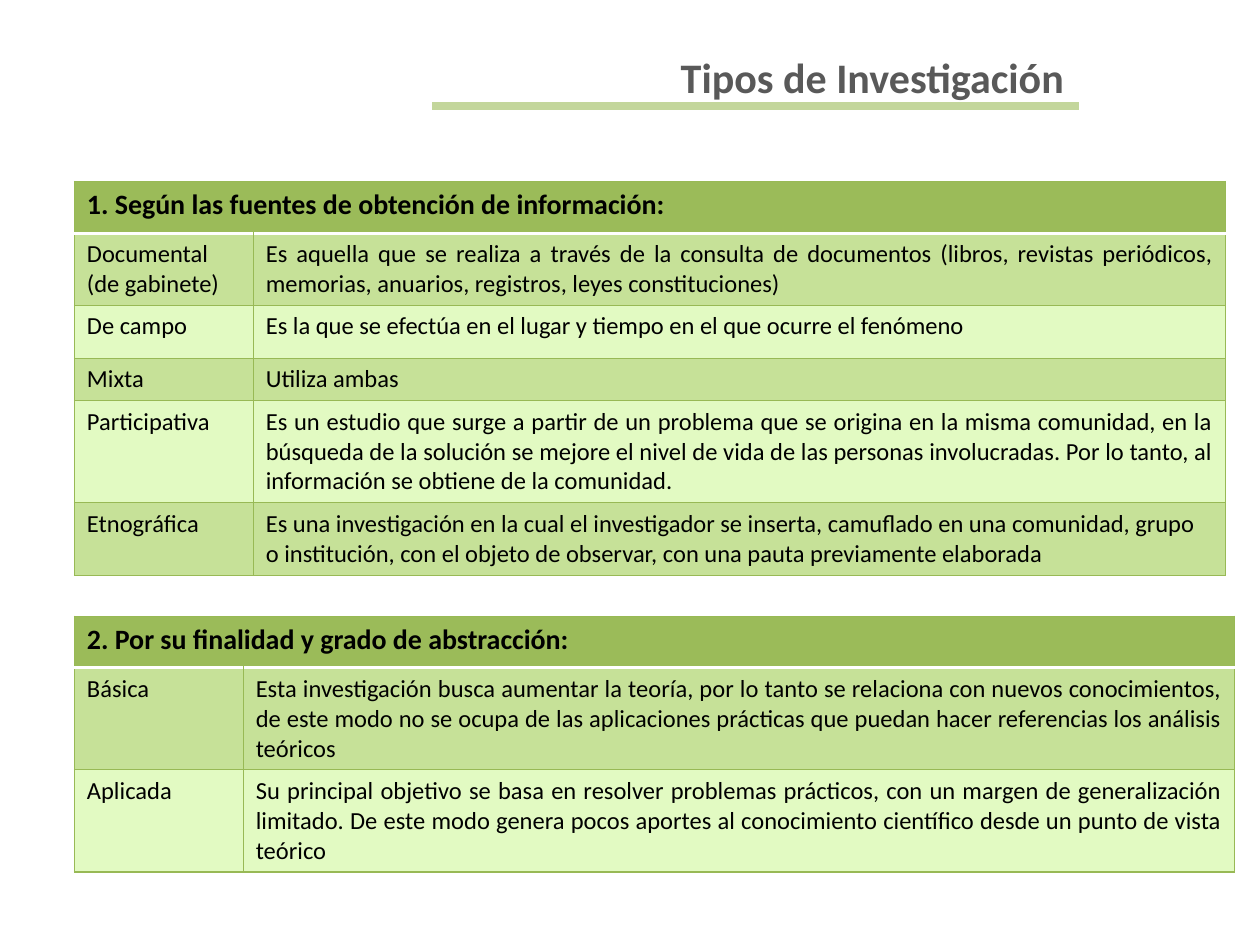
from lxml.etree import SubElement
from pptx import Presentation
from pptx.dml.color import RGBColor
from pptx.enum.shapes import MSO_CONNECTOR
from pptx.enum.text import MSO_ANCHOR, MSO_AUTO_SIZE, PP_ALIGN
from pptx.oxml import parse_xml
from pptx.oxml.ns import nsdecls, qn
from pptx.util import Inches, Pt

COLORS = {
    "title": "595959", "rule": "C3D69B", "header": "9BBB59", "border": "98B955",
    "dark_row": "C6E198", "light_row": "E2FAC2", "text": "000000", "white": "FFFFFF",
}
TITLE = "Tipos de Investigación "
TABLES = [
    {
        "heading": "1. Según las fuentes de obtención de información:",
        "top": 1.44,
        "columns": [1.42, 7.72],
        "heights": [0.41, 0.57, 0.42, 0.33, 0.8, 0.57],
        "left_aligned": ["Etnográfica"],
        "rows": [
            ("Documental (de gabinete)", "Es aquella que se realiza a través de la consulta de documentos (libros, revistas periódicos, memorias, anuarios, registros, leyes constituciones)"),
            ("De campo", "Es la que se efectúa en el lugar y tiempo en el que ocurre el fenómeno"),
            ("Mixta", "Utiliza ambas "),
            ("Participativa", "Es un estudio que surge a partir de un problema que se origina en la misma comunidad, en la búsqueda de la solución se mejore el nivel de vida de las personas involucradas. Por lo tanto, al información se obtiene de la comunidad."),
            ("Etnográfica", "Es una investigación en la cual el investigador se inserta, camuflado en una comunidad, grupo o institución, con el objeto de observar, con una pauta previamente elaborada"),
        ],
    },
    {
        "heading": "2. Por su finalidad y grado de abstracción:",
        "top": 4.89,
        "columns": [1.34, 7.87],
        "heights": [0.41, 0.8, 0.8],
        "left_aligned": [],
        "rows": [
            ("Básica", "Esta investigación busca aumentar la teoría, por lo tanto se relaciona con nuevos conocimientos, de este modo no se ocupa de las aplicaciones prácticas que puedan hacer referencias los análisis teóricos"),
            ("Aplicada", "Su principal objetivo se basa en resolver problemas prácticos, con un margen de generalización limitado. De este modo genera pocos aportes al conocimiento científico desde un punto de vista teórico"),
        ],
    },
]
TABLE_LEFT = 0.59


def set_attributes(target, values):
    for name, value in values.items():
        setattr(target, name, value)


def write_text(frame, text, size, color, bold, alignment):
    paragraph = frame.paragraphs[0]
    paragraph.alignment = alignment
    run = paragraph.add_run()
    run.text = text
    set_attributes(run.font, {"name": "Calibri", "size": Pt(size), "bold": bold})
    run.font.color.rgb = RGBColor.from_string(COLORS[color])


def format_cell(cell, fill, white_side):
    cell.fill.solid()
    cell.fill.fore_color.rgb = RGBColor.from_string(COLORS[fill])
    properties = cell._tc.get_or_add_tcPr()
    for position, side in enumerate("LRTB"):
        color, width = ("white", 2) if side == white_side else ("border", 0.75)
        properties.insert(position, parse_xml(
            f'<a:ln{side} {nsdecls("a")} w="{Pt(width)}"><a:solidFill>'
            f'<a:srgbClr val="{COLORS[color]}"/></a:solidFill></a:ln{side}>'))


def add_title(slide):
    title = slide.shapes.title
    set_attributes(title, {"left": Inches(3.66), "top": Inches(0.36),
                           "width": Inches(4.96), "height": Inches(0.5)})
    set_attributes(title.text_frame, {"word_wrap": True, "auto_size": MSO_AUTO_SIZE.NONE,
                                      "vertical_anchor": MSO_ANCHOR.TOP})
    write_text(title.text_frame, TITLE, 24, "title", True, PP_ALIGN.RIGHT)


def add_rule(slide):
    rule = slide.shapes.add_connector(
        MSO_CONNECTOR.STRAIGHT, Inches(3.43), Inches(0.84), Inches(8.56), Inches(0.84))
    rule.line.color.rgb = RGBColor.from_string(COLORS["rule"])
    rule.line.width = Pt(4.5)
    SubElement(rule._element.spPr, qn("a:effectLst"))


def add_research_table(slide, content):
    columns, heights = content["columns"], content["heights"]
    table = slide.shapes.add_table(
        len(heights), len(columns), Inches(TABLE_LEFT), Inches(content["top"]),
        Inches(sum(columns)), Inches(sum(heights))).table
    for column, width in zip(table.columns, columns):
        column.width = Inches(width)
    for row, height in zip(table.rows, heights):
        row.height = Inches(height)

    for cell in table.rows[0].cells:
        format_cell(cell, "header", "B")
    table.cell(0, 0).merge(table.cell(0, 1))
    write_text(table.cell(0, 0).text_frame, content["heading"], 16, "text", True, PP_ALIGN.LEFT)

    for row_index, texts in enumerate(content["rows"], 1):
        fill = "dark_row" if row_index % 2 else "light_row"
        justified = texts[0] not in content["left_aligned"]
        alignments = (PP_ALIGN.LEFT, PP_ALIGN.JUSTIFY if justified else PP_ALIGN.LEFT)
        for column_index, (text, alignment) in enumerate(zip(texts, alignments)):
            cell = table.cell(row_index, column_index)
            format_cell(cell, fill, "T" if row_index == 1 else None)
            write_text(cell.text_frame, text, 14, "text", False, alignment)


def main():
    presentation = Presentation()
    set_attributes(presentation, {"slide_width": Inches(10), "slide_height": Inches(7.5)})
    slide = presentation.slides.add_slide(presentation.slide_layouts[5])
    add_title(slide)
    add_rule(slide)
    for content in TABLES:
        add_research_table(slide, content)
    presentation.save("out.pptx")


if __name__ == "__main__":
    main()
